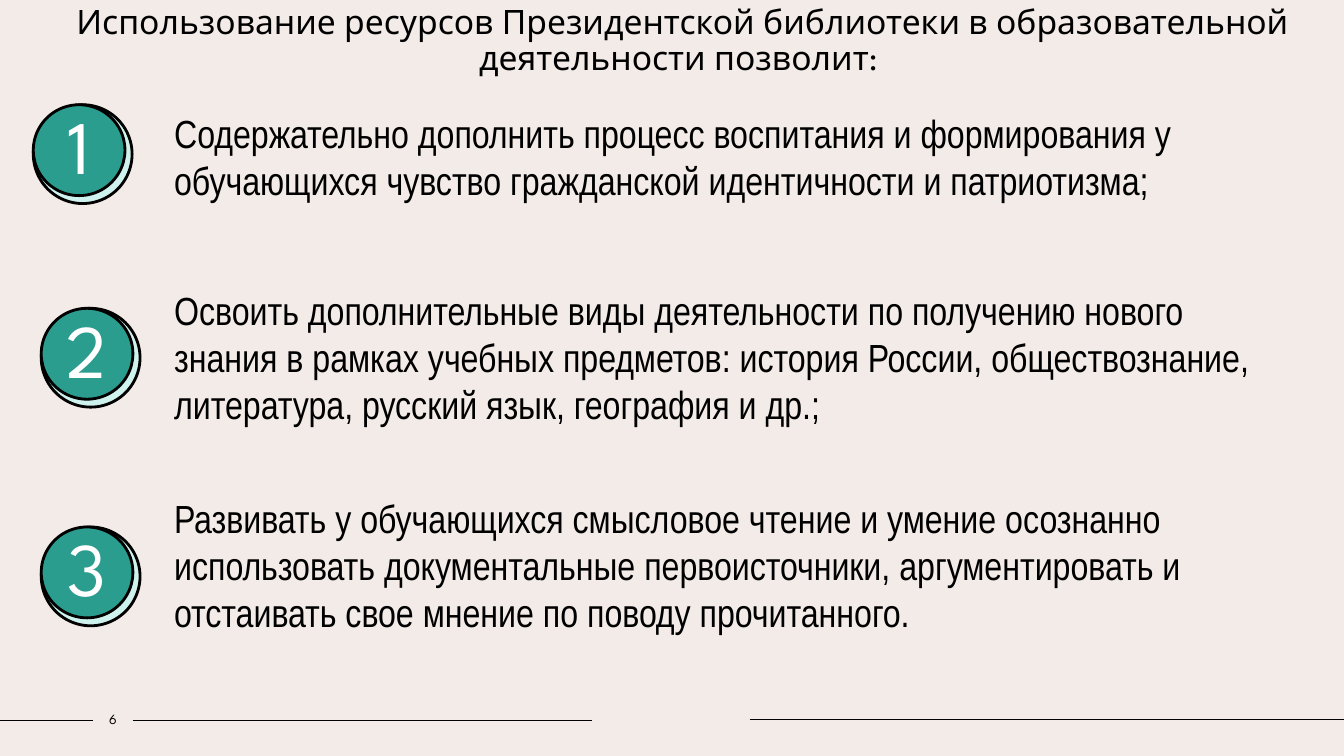
from lxml.etree import SubElement
from pptx import Presentation
from pptx.dml.color import RGBColor
from pptx.enum.shapes import MSO_CONNECTOR, MSO_SHAPE
from pptx.enum.text import MSO_ANCHOR, MSO_AUTO_SIZE, PP_ALIGN
from pptx.oxml.ns import qn
from pptx.util import Cm, Pt

HEADING_FONT, BODY_FONT = "League Spartan", "Arial Narrow"
BLACK, WHITE, TEAL, MINT, CREAM = "000000", "FFFFFF", "2A9D8F", "CEF2ED", "F3EBE8"


def paint(color_format, hex_color):
    color_format.rgb = RGBColor.from_string(hex_color)


class Deck:
    def __init__(self, width, height):
        self.prs = Presentation()
        self.prs.slide_width, self.prs.slide_height = Cm(width), Cm(height)
        self.slide = None

    def add_slide(self, background):
        self.slide = self.prs.slides.add_slide(self.prs.slide_layouts[5])
        fill = self.slide.background.fill
        fill.solid()
        paint(fill.fore_color, background)

    def add_text(self, frame, text, size, font=HEADING_FONT, color=BLACK,
                 align=PP_ALIGN.CENTER, anchor=MSO_ANCHOR.TOP, spacing=None, before=None):
        frame.word_wrap = True
        frame.vertical_anchor = anchor
        paragraph = frame.paragraphs[0]
        paragraph.alignment = align
        paragraph.line_spacing = spacing
        paragraph.space_before = before
        run = paragraph.add_run()
        run.text = text
        run.font.name, run.font.size = font, Pt(size)
        paint(run.font.color, color)

    def title(self, text, left, top, width, height):
        heading = self.slide.shapes.title
        heading.left, heading.top = Cm(left), Cm(top)
        heading.width, heading.height = Cm(width), Cm(height)
        heading.text_frame.auto_size = MSO_AUTO_SIZE.NONE
        self.add_text(heading.text_frame, text, 24, spacing=0.9, before=Pt(0))

    def text_box(self, left, top, width, height):
        box = self.slide.shapes.add_textbox(Cm(left), Cm(top), Cm(width), Cm(height))
        return box.text_frame

    def benefit(self, text, top, height):
        frame = self.text_box(4.14, top, 28.12, height)
        self.add_text(frame, text, 28, BODY_FONT, align=PP_ALIGN.LEFT)
        frame.auto_size = MSO_AUTO_SIZE.SHAPE_TO_FIT_TEXT

    def page_number(self, number, left, top, width, height):
        frame = self.text_box(left, top, width, height)
        frame.margin_left = frame.margin_right = 0
        self.add_text(frame, number, 10, anchor=MSO_ANCHOR.MIDDLE)

    def disc(self, left, top, width, height, color):
        disc = self.slide.shapes.add_shape(
            MSO_SHAPE.OVAL, Cm(left), Cm(top), Cm(width), Cm(height))
        disc.shadow.inherit = False
        disc.fill.solid()
        paint(disc.fill.fore_color, color)
        paint(disc.line.color, BLACK)
        disc.line.width = Pt(2)
        return disc

    def badge(self, number, left, top):
        self.disc(left, top, 2.49, 2.49, MINT)
        face = self.disc(left, top, 2.31, 2.29, TEAL)
        self.add_text(face.text_frame, number, 54, color=WHITE,
                      anchor=MSO_ANCHOR.MIDDLE, spacing=0.9, before=Pt(10))

    def rule(self, start, end, y):
        rule = self.slide.shapes.add_connector(
            MSO_CONNECTOR.STRAIGHT, Cm(start), Cm(y), Cm(end), Cm(y))
        paint(rule.line.color, BLACK)
        rule.line.width = Pt(1)
        SubElement(rule.element.spPr, qn("a:effectLst"))


# text, text top, text height, badge left, badge top (cm)
BENEFITS = [
    ("Содержательно дополнить процесс воспитания и формирования у обучающихся "
     "чувство гражданской идентичности и патриотизма;", 2.64, 3.84, 0.84, 2.64),
    ("Освоить дополнительные виды деятельности по получению нового знания в рамках "
     "учебных предметов: история России, обществознание, литература, русский язык, "
     "география и др.;", 7.09, 5.05, 1.04, 7.77),
    ("Развивать у обучающихся смысловое чтение и умение осознанно использовать "
     "документальные первоисточники, аргументировать и отстаивать свое мнение "
     "по поводу прочитанного.", 12.34, 5.05, 1.04, 13.28),
]


def main():
    deck = Deck(33.87, 19.05)
    deck.add_slide(CREAM)

    # Footer rules and page number
    for start, end, y in [(0, 2.34, 18.16), (3.35, 14.91, 18.16), (18.9, 33.87, 18.13)]:
        deck.rule(start, end, y)
    deck.page_number("6", 2.34, 17.78, 1.02, 0.69)

    # Heading
    deck.title("Использование ресурсов Президентской библиотеки в образовательной "
               "деятельности позволит: ", 0.84, 0, 32.72, 2.82)

    # Numbered benefits
    for number, (text, top, height, badge_left, badge_top) in enumerate(BENEFITS, 1):
        deck.benefit(text, top, height)
        deck.badge(str(number), badge_left, badge_top)

    deck.prs.save("out.pptx")


if __name__ == "__main__":
    main()
